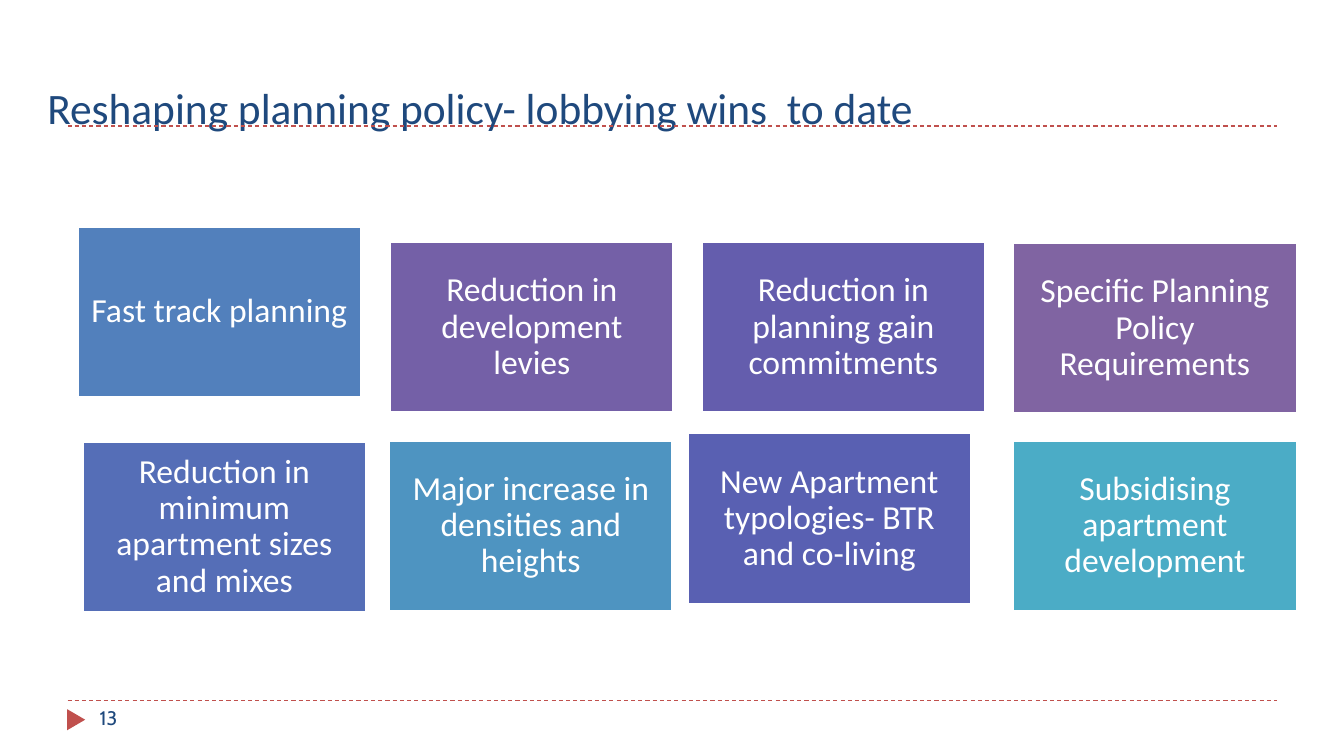
from lxml import etree
from pptx import Presentation
from pptx.dml.color import RGBColor
from pptx.enum.dml import MSO_LINE
from pptx.enum.shapes import MSO_CONNECTOR, MSO_SHAPE
from pptx.enum.text import MSO_ANCHOR, PP_ALIGN
from pptx.oxml.ns import qn
from pptx.util import Inches, Pt

STRAIGHT = MSO_CONNECTOR.STRAIGHT
RECTANGLE = MSO_SHAPE.RECTANGLE
TRIANGLE = MSO_SHAPE.ISOSCELES_TRIANGLE
DASH = MSO_LINE.DASH
TOP, MIDDLE, BOTTOM = MSO_ANCHOR.TOP, MSO_ANCHOR.MIDDLE, MSO_ANCHOR.BOTTOM
LEFT, CENTER = PP_ALIGN.LEFT, PP_ALIGN.CENTER

TITLE = "Reshaping planning policy- lobbying wins  to date"
PAGE_NUMBER = "13"
NAVY, RED, WHITE = "1F497D", "C0504D", "FFFFFF"
RULE_LEFT, RULE_RIGHT = 0.67, 12.67
RULE_TOPS = [1.25, 6.95]
CARD_WIDTH, CARD_HEIGHT = 2.81, 1.69
CARDS = [
    ("Fast track planning", 0.77, 2.25, "5280BC"),
    ("Reduction in development levies", 3.87, 2.4, "7460A7"),
    ("Reduction in planning gain commitments", 6.96, 2.4, "645DAD"),
    ("Specific Planning Policy Requirements", 10.05, 2.41, "8064A2"),
    ("Reduction in minimum apartment sizes and mixes", 0.82, 4.38, "556EB7"),
    ("Major increase in densities and heights", 3.86, 4.37, "4E94C1"),
    ("New Apartment typologies- BTR and co-living", 6.82, 4.3, "5960B2"),
    ("Subsidising apartment development", 10.05, 4.37, "4BACC6"),
]


def color(value):
    return RGBColor.from_string(value)


def box(left, top, width, height):
    return [Inches(length) for length in (left, top, width, height)]


def write(shape, text, size, font_name, text_color, alignment, anchor):
    frame = shape.text_frame
    frame.word_wrap = True
    frame.vertical_anchor = anchor
    paragraph = frame.paragraphs[0]
    paragraph.alignment = alignment
    run = paragraph.add_run()
    run.text = text
    run.font.size = Pt(size)
    run.font.name = font_name
    run.font.color.rgb = color(text_color)
    return paragraph


def add_rule(slide, top):
    rule = slide.shapes.add_connector(
        STRAIGHT, Inches(RULE_LEFT), Inches(top), Inches(RULE_RIGHT), Inches(top))
    rule.line.color.rgb = color(RED)
    rule.line.width = Pt(0.75)
    rule.line.dash_style = DASH
    etree.SubElement(rule._element.spPr, qn("a:effectLst"))


def add_filled_shape(slide, kind, bounds, fill):
    shape = slide.shapes.add_shape(kind, *bounds)
    shape.shadow.inherit = False
    shape.fill.solid()
    shape.fill.fore_color.rgb = color(fill)
    shape.line.fill.background()
    return shape


def add_card(slide, text, left, top, fill):
    card = add_filled_shape(
        slide, RECTANGLE, box(left, top, CARD_WIDTH, CARD_HEIGHT), fill)
    card.line.color.rgb = color(WHITE)
    card.line.width = Pt(1.5)
    frame = card.text_frame
    frame.margin_left = frame.margin_right = Inches(0.1)
    frame.margin_top = frame.margin_bottom = Inches(0.1)
    paragraph = write(card, text, 24, "Calibri", WHITE, CENTER, MIDDLE)
    paragraph.line_spacing = 0.9


def main():
    presentation = Presentation()
    presentation.slide_width = Inches(13.33)
    presentation.slide_height = Inches(7.5)
    slide = presentation.slides.add_slide(presentation.slide_layouts[5])

    for top in RULE_TOPS:
        add_rule(slide, top)
    marker = add_filled_shape(slide, TRIANGLE, box(0.65, 7.05, 0.21, 0.18), RED)
    marker.rotation = 90

    title = slide.shapes.title
    title.left, title.top, title.width, title.height = box(0.37, 0.12, 11.5, 1.25)
    write(title, TITLE, 31, "Calibri", NAVY, LEFT, BOTTOM)

    for card in CARDS:
        add_card(slide, *card)

    number = slide.shapes.add_textbox(*box(0.89, 6.95, 2.89, 0.4))
    write(number, PAGE_NUMBER, 14, "Cabin", NAVY, LEFT, TOP)
    presentation.save("out.pptx")


if __name__ == "__main__":
    main()
